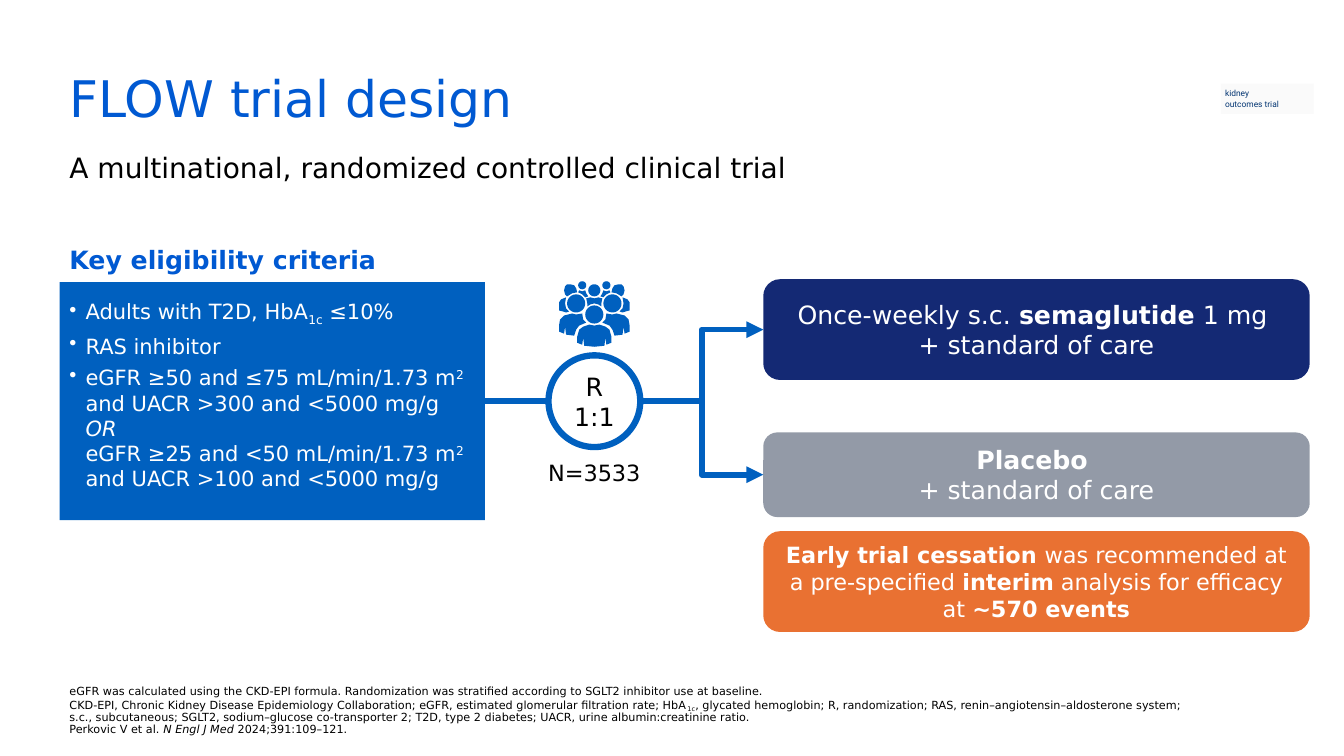
from copy import deepcopy
from dataclasses import dataclass
from math import cos, pi, sin

from lxml import etree
from pptx import Presentation
from pptx.dml.color import RGBColor
from pptx.enum.shapes import MSO_CONNECTOR, MSO_SHAPE
from pptx.enum.text import MSO_ANCHOR, PP_ALIGN
from pptx.oxml.ns import qn
from pptx.util import Inches, Pt

RECT, ROUND = MSO_SHAPE.RECTANGLE, MSO_SHAPE.ROUNDED_RECTANGLE
NODE = MSO_SHAPE.FLOWCHART_CONNECTOR
STRAIGHT, ELBOW = MSO_CONNECTOR.STRAIGHT, MSO_CONNECTOR.ELBOW
TOP, MIDDLE, BOTTOM = MSO_ANCHOR.TOP, MSO_ANCHOR.MIDDLE, MSO_ANCHOR.BOTTOM
LEFT, CENTER = PP_ALIGN.LEFT, PP_ALIGN.CENTER
LEFT_SIDE, RIGHT_SIDE = 1, 3


@dataclass(frozen=True)
class Theme:
    font: str = "DejaVu Sans"
    tag_font: str = "Roboto"
    heading: str = "0059D2"
    flow: str = "0060BF"
    navy: str = "142974"
    grey: str = "939AA7"
    orange: str = "E97132"
    tag: str = "033572"
    tag_fill: str = "FAFAFA"
    white: str = "FFFFFF"
    black: str = "000000"
    title_size: int = 36
    subtitle_size: int = 20
    head_size: int = 18
    note_size: int = 16
    list_size: int = 15
    foot_size: int = 8
    tag_size: int = 6


T = Theme()

# Each paragraph is a list of runs: plain text, or (text, style).
TITLE = [["FLOW trial design"]]
SUBTITLE = [["A multinational, randomized controlled clinical trial"]]
TAG = [["kidney"], ["outcomes trial"]]
CRITERIA_HEAD = [[("Key eligibility criteria", "bold")]]
CRITERIA = [
    ["Adults with T2D, HbA", ("1c", "sub"), " ≤10%"],
    ["RAS inhibitor"],
    ["eGFR ≥50 and ≤75 mL/min/1.73 m", ("2", "sup"),
     " and UACR >300 and <5000 mg/g\n", ("OR \n", "italic"),
     "eGFR ≥25 and <50 mL/min/1.73 m", ("2", "sup"),
     " and UACR >100 and <5000 mg/g"],
]
RANDOMIZATION = [["R"], ["1:1"]]
ENROLLED = [["N=3533"]]
SEMAGLUTIDE = [["Once-weekly s.c. ", ("semaglutide", "bold"),
                " 1 mg \n+ standard of care"]]
PLACEBO = [[("Placebo \n", "bold"), "+ standard of care"]]
CESSATION = [[("Early trial cessation ", "bold"),
              "was recommended at a pre-specified ", ("interim", "bold"),
              " analysis for efficacy at ", ("~570 events", "bold")]]
FOOTNOTE = [[
    "eGFR was calculated using the CKD-EPI formula. Randomization was "
    "stratified according to SGLT2 inhibitor use at baseline.\n"
    "CKD-EPI, Chronic Kidney Disease Epidemiology Collaboration; eGFR, "
    "estimated glomerular filtration rate; HbA", ("1c", "sub"),
    ", glycated hemoglobin; R, randomization; RAS, "
    "renin–angiotensin–aldosterone system; \n"
    "s.c., subcutaneous; SGLT2, sodium–glucose co-transporter 2; T2D, type 2 "
    "diabetes; UACR, urine albumin:creatinine ratio.\nPerkovic V et al. ",
    ("N Engl J Med ", "italic"), "2024;391:109–121.",
]]

# Layout lines shared by several parts, in inches
MARGIN = 0.59
AXIS_Y = 3.98
CRITERIA_W, CRITERIA_H = 4.22, 2.36
NODE_X, NODE_D = 5.44, 0.91
NODE_MID = NODE_X + NODE_D / 2
ARM_X, ARM_W = 7.57, 5.42
ARMS = [  # text, top, height, fill, size, connected to the randomization
    (SEMAGLUTIDE, 2.77, 1.0, T.navy, T.head_size, True),
    (PLACEBO, 4.29, 0.84, T.grey, T.head_size, True),
    (CESSATION, 5.27, 1.0, T.orange, T.note_size, False),
]
# Crowd icon, x measured from its axis of symmetry
HEADS = [(0, 2.88, 0.06), (0, 3.12, 0.09), (0.12, 2.83, 0.04),
         (-0.12, 2.83, 0.04), (0.18, 3.01, 0.09), (-0.18, 3.01, 0.09)]
CENTRE_HALVES = [  # right halves, from axis to axis
    [(0, 2.96), (0.04, 2.95), (0.08, 2.96), (0.07, 3.01), (0.07, 3.04),
     (0.04, 3.02), (0, 3.01)],
    [(0, 3.23), (0.05, 3.22), (0.11, 3.24), (0.15, 3.27), (0.17, 3.34),
     (0.17, 3.4), (0.12, 3.42), (0.11, 3.35), (0.1, 3.43), (0, 3.44)],
]
SIDE_OUTLINES = [  # right-hand figures, repeated on the left
    [(0.09, 2.95), (0.12, 2.92), (0.16, 2.9), (0.15, 2.88), (0.12, 2.89),
     (0.09, 2.88), (0.08, 2.91), (0.06, 2.94)],
    [(0.27, 2.94), (0.29, 2.92), (0.3, 2.88), (0.29, 2.84), (0.27, 2.82),
     (0.24, 2.82), (0.2, 2.83), (0.18, 2.86), (0.17, 2.9), (0.22, 2.91)],
    [(0.28, 2.95), (0.33, 2.97), (0.35, 3), (0.35, 3.08), (0.31, 3.09),
     (0.28, 3.1), (0.25, 3.09), (0.28, 3.06), (0.29, 3.01)],
    [(0.22, 3.11), (0.3, 3.13), (0.34, 3.17), (0.35, 3.23), (0.35, 3.29),
     (0.3, 3.31), (0.29, 3.24), (0.28, 3.32), (0.2, 3.33), (0.18, 3.27),
     (0.15, 3.23), (0.08, 3.2), (0.11, 3.17), (0.12, 3.11), (0.18, 3.12)],
]

prs = Presentation()
prs.slide_width, prs.slide_height = Inches(13.33), Inches(7.5)
slide = prs.slides.add_slide(prs.slide_layouts[6])


def rgb(color):
    return RGBColor.from_string(color)


def write(sp, paragraphs, size, color=T.black, font=T.font, align=LEFT,
          anchor=MIDDLE, inset=(0.1, 0.05, 0.1, 0.05), bullet=False,
          after=0, spacing=1.0):
    """Fill a shape with paragraphs; inset is left, top, right, bottom."""
    tf = sp.text_frame
    tf.word_wrap, tf.vertical_anchor = True, anchor
    (tf.margin_left, tf.margin_top,
     tf.margin_right, tf.margin_bottom) = map(Inches, inset)
    for i, runs in enumerate(paragraphs):
        p = tf.add_paragraph() if i else tf.paragraphs[0]
        if bullet:
            pPr = p._p.get_or_add_pPr()
            pPr.set("marL", str(Inches(0.16)))
            pPr.set("indent", str(Inches(-0.16)))
            clr = etree.SubElement(pPr, qn("a:buClr"))
            etree.SubElement(clr, qn("a:srgbClr"), val=color)
            etree.SubElement(pPr, qn("a:buChar"), char="•")
        p.alignment, p.line_spacing, p.space_after = align, spacing, Pt(after)
        for run in runs:
            text, style = (run, "") if isinstance(run, str) else run
            for j, piece in enumerate(text.split("\n")):
                if j:
                    p.add_line_break()
                    p._p[-1].append(deepcopy(r._r.rPr))
                if not piece:
                    continue
                r = p.add_run()
                r.text = piece
                r.font.name, r.font.size = font, Pt(size)
                r.font.color.rgb = rgb(color)
                r.font.bold, r.font.italic = style == "bold", style == "italic"
                if style in ("sub", "sup"):
                    shift = "-25000" if style == "sub" else "30000"
                    r._r.rPr.set("baseline", shift)


def add_text(x, y, w, h, paragraphs, size, **fmt):
    write(slide.shapes.add_textbox(*map(Inches, (x, y, w, h))),
          paragraphs, size, **fmt)


def paint(sp, fill=None, line=None, width=0):
    sp.shadow.inherit = False
    if fill:
        sp.fill.solid()
        sp.fill.fore_color.rgb = rgb(fill)
    else:
        sp.fill.background()
    if line:
        sp.line.color.rgb, sp.line.width = rgb(line), Pt(width)
    else:
        sp.line.fill.background()


def add_box(kind, x, y, w, h, *look):
    sp = slide.shapes.add_shape(kind, *map(Inches, (x, y, w, h)))
    paint(sp, *look)
    return sp


def add_link(kind, x1, y1, x2, y2, arrow=False):
    cx = slide.shapes.add_connector(kind, *map(Inches, (x1, y1, x2, y2)))
    cx.line.color.rgb, cx.line.width = rgb(T.flow), Pt(4)
    if arrow:
        etree.SubElement(cx.line._get_or_add_ln(), qn("a:tailEnd"),
                         type="triangle")
    etree.SubElement(cx._element.spPr, qn("a:effectLst"))
    return cx


def mirror(points):
    return [(-x, y) for x, y in reversed(points)]


def circle(cx, cy, radius, steps=24):
    turns = [2 * pi * k / steps for k in range(steps)]
    return [(cx + radius * cos(a), cy + radius * sin(a)) for a in turns]


def add_crowd(mid):
    outlines = [circle(*head) for head in HEADS]
    outlines += [half + mirror(half) for half in CENTRE_HALVES]
    outlines += SIDE_OUTLINES + [mirror(side) for side in SIDE_OUTLINES]
    builder = None
    for outline in outlines:
        start, *rest = [(Inches(mid + x), Inches(y)) for x, y in outline]
        if builder:
            builder.move_to(*start)
        else:
            builder = slide.shapes.build_freeform(*start)
        builder.add_line_segments(rest, close=True)
    paint(builder.convert_to_shape(), T.flow)


tag = add_box(RECT, 12.11, 0.83, 0.92, 0.3, T.tag_fill)
write(tag, TAG, T.tag_size, color=T.tag, font=T.tag_font, anchor=TOP,
      inset=(0.04, 0.05, 0, 0.05))
add_text(MARGIN, 0.4, 9.59, 1.2, TITLE, T.title_size, color=T.heading,
         spacing=0.9)
add_text(MARGIN, 1.44, 12.03, 0.44, SUBTITLE, T.subtitle_size, anchor=TOP)
add_text(MARGIN, 2.37, 5.26, 0.4, CRITERIA_HEAD, T.head_size,
         color=T.heading, anchor=TOP)
add_text(MARGIN, 6.47, 11.92, 0.88, FOOTNOTE, T.foot_size, anchor=BOTTOM,
         spacing=0.9)

criteria = add_box(RECT, MARGIN, AXIS_Y - CRITERIA_H / 2, CRITERIA_W,
                   CRITERIA_H, T.flow)
write(criteria, CRITERIA, T.list_size, color=T.white, bullet=True, after=4.5,
      inset=(0.1, 0, 0, 0.13))
add_link(STRAIGHT, MARGIN + CRITERIA_W, AXIS_Y, NODE_X,
         AXIS_Y).begin_connect(criteria, RIGHT_SIDE)

for paragraphs, top, height, fill, size, linked in ARMS:
    arm = add_box(ROUND, ARM_X, top, ARM_W, height, fill)
    write(arm, paragraphs, size, color=T.white, align=CENTER)
    if linked:
        add_link(ELBOW, NODE_X + NODE_D, AXIS_Y, ARM_X, top + height / 2,
                 arrow=True).end_connect(arm, LEFT_SIDE)

node = add_box(NODE, NODE_X, AXIS_Y - NODE_D / 2, NODE_D, NODE_D, T.white,
               T.flow, 4.5)
write(node, RANDOMIZATION, T.head_size, align=CENTER)
enrolled = add_box(ROUND, NODE_MID - 0.685, 4.44, 1.37, 0.43)
enrolled.adjustments[0] = 0
write(enrolled, ENROLLED, T.note_size, align=CENTER, anchor=BOTTOM)
add_crowd(NODE_MID)

prs.save("out.pptx")
